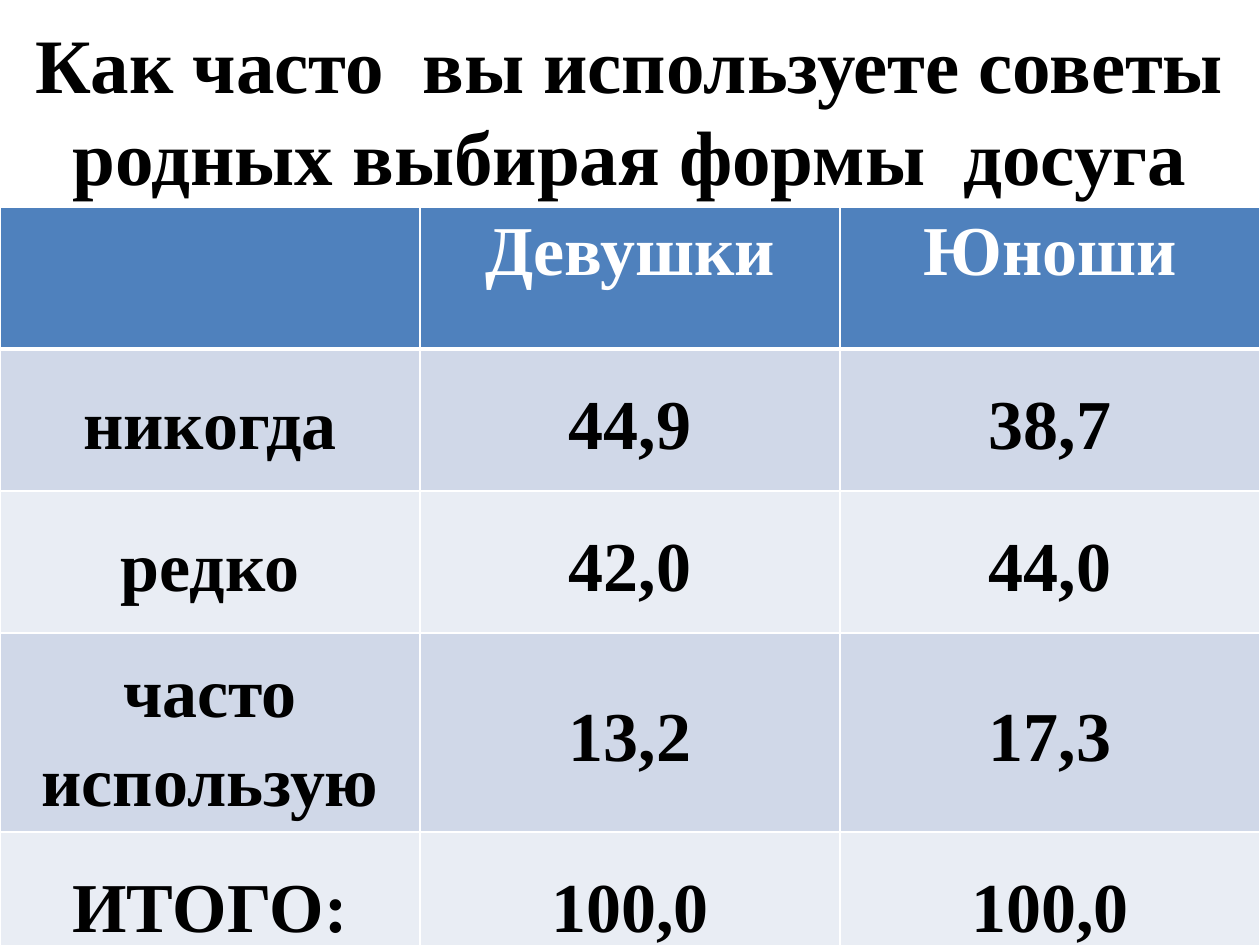
import pptx
import pptx.dml.color
import pptx.enum.text
import pptx.oxml
import pptx.oxml.ns
import pptx.util
from dataclasses import dataclass

PX = 914400 / 126


@dataclass(frozen=True)
class Theme:
    font: str = "Times New Roman"
    title_size: int = 44
    table_size: int = 40
    text: str = "000000"
    white: str = "FFFFFF"
    header: str = "4F81BD"
    bands: tuple = ("D0D8E8", "E9EDF4")


theme = Theme()


def px(length):
    return pptx.util.Emu(round(length * PX))


def add_run(paragraph, text, size, color):
    paragraph.alignment = pptx.enum.text.PP_ALIGN.CENTER
    run = paragraph.add_run()
    run.text = text
    run.font.name = theme.font
    run.font.size = pptx.util.Pt(size)
    run.font.bold = True
    run.font.color.rgb = pptx.dml.color.RGBColor.from_string(color)


presentation = pptx.Presentation()
presentation.slide_width = px(1260)
presentation.slide_height = px(945)
slide = presentation.slides.add_slide(presentation.slide_layouts[6])

# Title
title = slide.shapes.add_textbox(px(0), px(0), px(1260), px(217))
title.text_frame.word_wrap = True
title.text_frame.vertical_anchor = pptx.enum.text.MSO_ANCHOR.MIDDLE
add_run(title.text_frame.paragraphs[0],
        "Как часто  вы используете советы родных выбирая формы  досуга",
        theme.title_size, theme.text)

# Table of answers
rows = [
    ("", "Девушки", "Юноши"),
    ("никогда", "44,9", "38,7"),
    ("редко", "42,0", "44,0"),
    ("часто использую", "13,2", "17,3"),
    ("ИТОГО:", "100,0", "100,0"),
]
row_height = 142
table = slide.shapes.add_table(len(rows), 3, px(0), px(207), px(1260),
                               px(row_height * len(rows))).table
for column in table.columns:
    column.width = px(420)

for row_index, row in enumerate(rows):
    is_header = row_index == 0
    fill_color = theme.header if is_header else theme.bands[(row_index - 1) % 2]
    for column_index, text in enumerate(row):
        cell = table.cell(row_index, column_index)
        cell.fill.solid()
        cell.fill.fore_color.rgb = pptx.dml.color.RGBColor.from_string(fill_color)
        paragraph = cell.text_frame.paragraphs[0]
        if not is_header:
            cell.vertical_anchor = pptx.enum.text.MSO_ANCHOR.MIDDLE
            cell.margin_left = cell.margin_right = px(3)
            cell.margin_top = cell.margin_bottom = px(3)
            paragraph.line_spacing = 1.15
        if text:
            add_run(paragraph, text, theme.table_size,
                    theme.white if is_header else theme.text)

        # White borders, thicker between the header and the body
        properties = cell._tc.get_or_add_tcPr()
        for position, side in enumerate("LRTB"):
            thick = (row_index, side) in ((0, "B"), (1, "T"))
            width = pptx.util.Pt(3 if thick else 1)
            border = pptx.oxml.parse_xml(
                f'<a:ln{side} {pptx.oxml.ns.nsdecls("a")} w="{width}"><a:solidFill>'
                f'<a:srgbClr val="{theme.white}"/></a:solidFill></a:ln{side}>')
            properties.insert(position, border)

presentation.save("out.pptx")
